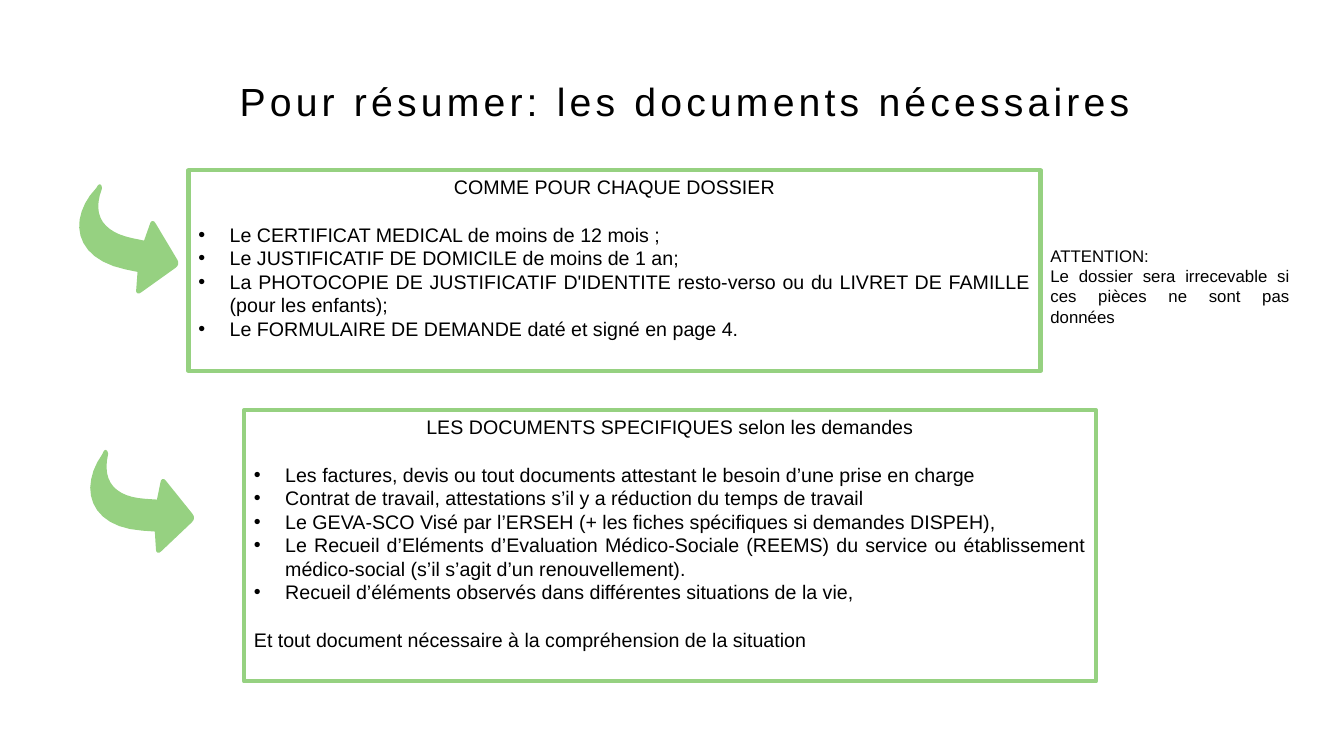
import math

import pptx
import pptx.dml.color
import pptx.enum.shapes
import pptx.enum.text
import pptx.oxml.ns
import pptx.util
from lxml import etree

Inches, Pt = pptx.util.Inches, pptx.util.Pt
RGBColor = pptx.dml.color.RGBColor
ALIGN = pptx.enum.text.PP_ALIGN
ANCHOR = pptx.enum.text.MSO_ANCHOR
qn = pptx.oxml.ns.qn

BLACK = RGBColor(0, 0, 0)
GREEN = RGBColor(0x96, 0xD1, 0x81)

# Content
TITLE = "Pour résumer: les documents nécessaires"
WARNING = ["ATTENTION:",
           "Le dossier sera irrecevable si ces pièces ne sont pas données"]
DOCUMENT_BOXES = [
    {
        "place": (2.42, 4.07, 8.45, 2.69),
        "heading": "LES DOCUMENTS SPECIFIQUES selon les demandes",
        "items": [
            "Les factures, devis ou tout documents attestant le besoin d’une prise en charge",
            "Contrat de travail, attestations s’il y a réduction du temps de travail",
            "Le GEVA-SCO Visé par l’ERSEH (+ les fiches spécifiques si demandes DISPEH),",
            "Le Recueil d’Eléments d’Evaluation Médico-Sociale (REEMS) du service ou "
            "établissement médico-social (s’il s’agit d’un renouvellement).",
            "Recueil d’éléments observés dans différentes situations de la vie,",
        ],
        "closing": "Et tout document nécessaire à la compréhension de la situation",
    },
    {
        "place": (1.87, 1.69, 8.45, 1.99),
        "heading": "COMME POUR CHAQUE DOSSIER",
        "items": [
            "Le CERTIFICAT MEDICAL de moins de 12 mois ;",
            "Le JUSTIFICATIF DE DOMICILE de moins de 1 an;",
            "La PHOTOCOPIE DE JUSTIFICATIF D'IDENTITE resto-verso ou du LIVRET DE "
            "FAMILLE (pour les enfants);",
            "Le FORMULAIRE DE DEMANDE daté et signé en page 4.",
        ],
        "closing": None,
    },
]
ARROWS = [  # centre in inches, rotation in degrees
    {"centre": (1.28, 2.39), "turn": 191.8},
    {"centre": (1.41, 4.98), "turn": 183.9},
]

# Text sizes and gaps
TITLE_SIZE, LIST_SIZE, WARNING_SIZE = 28, 14, 12
ONE_LINE = Pt(17)
BULLET_INDENT = Inches(0.31)

# Curved arrow before rotation: the head points left, the tail bends upwards
AXIS = -0.13          # height of the line through shaft and head tip
SHAFT_HALF, HEAD_HALF = 0.15, 0.38
SHAFT_X, NECK_X, HEAD_X, TIP_X = -0.03, -0.16, -0.19, -0.54
TAIL_OUTER, TAIL_TIP, TAIL_INNER = (0.41, 0.44), (0.39, 0.51), (0.37, 0.45)
OUTER_PULLS = [(0.62, 0.1), (0.5, AXIS - SHAFT_HALF)]
INNER_PULLS = [(0.25, AXIS + SHAFT_HALF), (0.42, 0.15)]
CORNER_CUT = 0.05
UNITS_PER_INCH = 1000


def between(start, end, share):
    return tuple(a + (b - a) * share for a, b in zip(start, end))


def curve(*controls, steps=12):
    """Points on the Bezier curve with these control points."""
    points = []
    for step in range(steps + 1):
        level = controls
        while len(level) > 1:
            level = [between(a, b, step / steps) for a, b in zip(level, level[1:])]
        points.append(level[0])
    return points


def rounded(before, corner, after):
    """Replace a sharp corner by a small curve."""
    start, end = (between(corner, other, CORNER_CUT / math.dist(corner, other))
                  for other in (before, after))
    return curve(start, corner, end, steps=4)


def arrow_outline():
    shaft_low, shaft_high = ((SHAFT_X, AXIS + side * SHAFT_HALF) for side in (-1, 1))
    neck_low, neck_high = ((NECK_X, AXIS + side * SHAFT_HALF) for side in (-1, 1))
    head_low, head_high = ((HEAD_X, AXIS + side * HEAD_HALF) for side in (-1, 1))
    tip = (TIP_X, AXIS)
    return [
        *curve(TAIL_OUTER, *OUTER_PULLS, shaft_low),
        neck_low,
        *rounded(neck_low, head_low, tip),
        *rounded(head_low, tip, head_high),
        *rounded(tip, head_high, neck_high),
        neck_high,
        *curve(shaft_high, *INNER_PULLS, TAIL_INNER),
        *curve(TAIL_INNER, TAIL_TIP, TAIL_OUTER, steps=4),
    ]


def add_arrow(page, centre, turn):
    points = [(x * UNITS_PER_INCH, y * UNITS_PER_INCH) for x, y in arrow_outline()]
    builder = page.shapes.build_freeform(*points[0], scale=Inches(1) / UNITS_PER_INCH)
    builder.add_line_segments(points[1:], close=True)
    arrow = builder.convert_to_shape()
    arrow.left = Inches(centre[0]) - arrow.width // 2
    arrow.top = Inches(centre[1]) - arrow.height // 2
    arrow.rotation = turn
    arrow.shadow.inherit = False
    arrow.fill.solid()
    arrow.fill.fore_color.rgb = GREEN
    arrow.line.color.rgb = GREEN
    arrow.line.width = Pt(1.25)


def write(para, text, size, align, **gaps):
    """Put one formatted run in a paragraph."""
    span = para.add_run()
    span.text = text
    for name, value in {"size": Pt(size), "name": "Arial"}.items():
        setattr(span.font, name, value)
    span.font.color.rgb = BLACK
    formats = {"alignment": align, "line_spacing": 1.0,
               "space_before": Pt(0), "space_after": Pt(0), **gaps}
    for name, value in formats.items():
        setattr(para, name, value)
    return span


def prepare(frame, anchor=ANCHOR.TOP):
    formats = {"word_wrap": True, "vertical_anchor": anchor,
               "auto_size": pptx.enum.text.MSO_AUTO_SIZE.NONE,
               "margin_left": Inches(0.1), "margin_right": Inches(0.1),
               "margin_top": Inches(0.05), "margin_bottom": Inches(0.05)}
    for name, value in formats.items():
        setattr(frame, name, value)


def add_bullet(para):
    properties = para._p.get_or_add_pPr()
    properties.set("marL", str(BULLET_INDENT))
    properties.set("indent", str(-BULLET_INDENT))
    etree.SubElement(properties, qn("a:buFont")).set("typeface", "Arial")
    etree.SubElement(properties, qn("a:buChar")).set("char", "•")


def add_document_box(page, place, heading, items, closing):
    box = page.shapes.add_shape(pptx.enum.shapes.MSO_SHAPE.RECTANGLE,
                                *map(Inches, place))
    box.shadow.inherit = False
    box.fill.background()
    box.line.color.rgb = GREEN
    box.line.width = Pt(3)
    frame = box.text_frame
    prepare(frame)
    write(frame.paragraphs[0], heading, LIST_SIZE, ALIGN.CENTER, space_after=ONE_LINE)
    for item in items:
        para = frame.add_paragraph()
        add_bullet(para)
        write(para, item, LIST_SIZE, ALIGN.JUSTIFY)
    if closing:
        write(frame.add_paragraph(), closing, LIST_SIZE, ALIGN.JUSTIFY,
              space_before=ONE_LINE)


def main():
    deck = pptx.Presentation()
    deck.slide_width, deck.slide_height = Inches(13.33), Inches(7.5)
    page = deck.slides.add_slide(deck.slide_layouts[5])

    # Title, with widely spaced letters
    title = page.shapes.title
    title.left, title.top, title.width, title.height = map(
        Inches, (1.95, 0.72, 9.69, 0.57))
    prepare(title.text_frame, ANCHOR.MIDDLE)
    span = write(title.text_frame.paragraphs[0], TITLE, TITLE_SIZE, ALIGN.CENTER)
    span.font._element.set("spc", "300")

    # Arrows and document lists
    for arrow in ARROWS:
        add_arrow(page, **arrow)
    for content in DOCUMENT_BOXES:
        add_document_box(page, **content)

    # Warning beside the first list
    frame = page.shapes.add_textbox(
        *map(Inches, (10.32, 2.39, 2.57, 0.71))).text_frame
    prepare(frame)
    for number, text in enumerate(WARNING):
        para = frame.add_paragraph() if number else frame.paragraphs[0]
        write(para, text, WARNING_SIZE, ALIGN.JUSTIFY)

    deck.save("out.pptx")


if __name__ == "__main__":
    main()
